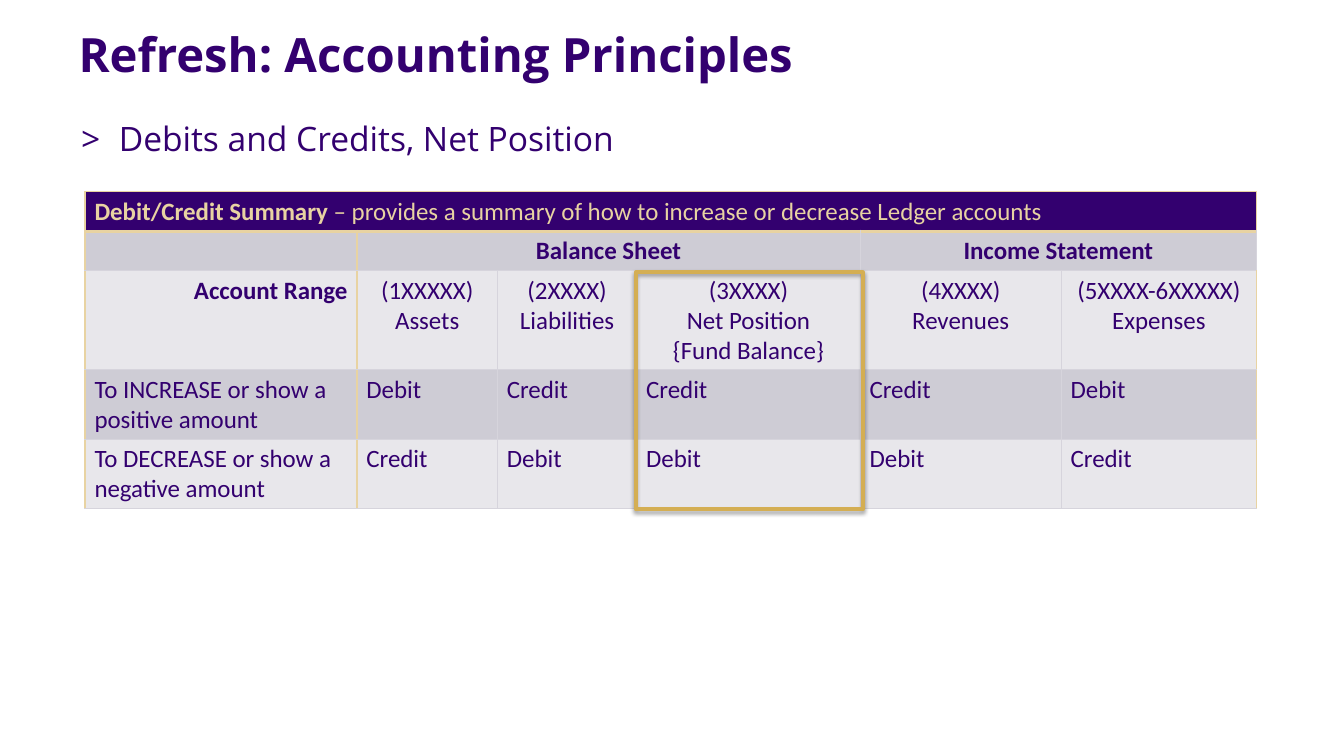
from dataclasses import dataclass

from lxml import etree
from pptx import Presentation
from pptx.dml.color import RGBColor
from pptx.enum.shapes import MSO_SHAPE
from pptx.enum.text import MSO_ANCHOR, MSO_AUTO_SIZE, PP_ALIGN
from pptx.oxml import parse_xml
from pptx.oxml.ns import nsdecls, qn
from pptx.util import Pt

LEFT, MID, RIGHT = PP_ALIGN.LEFT, PP_ALIGN.CENTER, PP_ALIGN.RIGHT
TOP = MSO_ANCHOR.TOP
NO_FIT = MSO_AUTO_SIZE.NONE
RECT = MSO_SHAPE.RECTANGLE

PURPLE = RGBColor(0x33, 0x00, 0x6F)
SAND = RGBColor(0xE8, 0xD3, 0xA2)
GOLD = RGBColor(0xD4, 0xAE, 0x53)
DARK = RGBColor(0xCE, 0xCC, 0xD5)
PALE = RGBColor(0xE8, 0xE7, 0xEB)
RULE = RGBColor(0xD6, 0xD4, 0xDC)

WIDTHS = (207.2, 107, 106.2, 170.2, 153.2, 148.8)
HEIGHTS = (28.8, 28.8, 72.8, 51, 51)
LAST = len(WIDTHS) - 1


@dataclass
class Cell:
    text: str = ""
    align: PP_ALIGN = LEFT
    bold: bool = False
    span: int = 1


@dataclass
class Row:
    fill: RGBColor
    cells: list[Cell]


ROWS = [
    Row(PURPLE, [Cell("Debit/Credit Summary ", bold=True, span=6)]),
    Row(DARK, [Cell(), Cell("Balance Sheet", MID, True, 3),
               Cell("Income Statement", MID, True, 2)]),
    Row(PALE, [Cell("Account Range", RIGHT, True)] + [
        Cell(text, MID) for text in (
            "(1XXXXX)\nAssets", "(2XXXX)\nLiabilities",
            "(3XXXX)\nNet Position\n{Fund Balance}",
            "(4XXXX)\nRevenues", "(5XXXX-6XXXXX)\nExpenses")]),
    Row(DARK, [Cell(text) for text in (
        "To INCREASE or show a positive amount",
        "Debit", "Credit", "Credit", "Credit", "Debit")]),
    Row(PALE, [Cell(text) for text in (
        "To DECREASE or show a negative amount",
        "Credit", "Debit", "Debit", "Debit", "Credit")]),
]


def write(para, text: str, *, size: float = 19, font: str = "Calibri",
          color: RGBColor = PURPLE, bold: bool = False,
          align: PP_ALIGN = LEFT) -> None:
    """Add one formatted run to a paragraph."""
    para.alignment = align
    run = para.add_run()
    run.text = text
    run.font.size = Pt(size)
    run.font.name = font
    run.font.bold = bold
    run.font.color.rgb = color


def place(shape, left: float, top: float, width: float, height: float) -> None:
    shape.left, shape.top = Pt(left), Pt(top)
    shape.width, shape.height = Pt(width), Pt(height)


def edge(cell, side: str, color: RGBColor, width: float) -> None:
    """Draw one border; sides must come in the order L, R, T, B."""
    props = cell._tc.get_or_add_tcPr()
    line = etree.SubElement(props, qn(f"a:ln{side}"), w=str(Pt(width)))
    fill = etree.SubElement(line, qn("a:solidFill"))
    etree.SubElement(fill, qn("a:srgbClr"), val=str(color))


def frame(cell, row: int, col: int) -> None:
    """Sand lines around the table, heading and first column."""
    edge(cell, "L", SAND if col < 2 else RULE, 1)
    edge(cell, "R", SAND if col in (0, LAST) else RULE, 1)
    edge(cell, "T", SAND if row < 2 else RULE, 3 if row == 1 else 1)
    edge(cell, "B", SAND if row == 0 else RULE, 3 if row == 0 else 1)


def fill_row(table, row: int, data: Row) -> None:
    for col in range(len(WIDTHS)):
        cell = table.cell(row, col)
        frame(cell, row, col)
        cell.fill.solid()
        cell.fill.fore_color.rgb = data.fill
    col = 0
    color = SAND if row == 0 else PURPLE
    for item in data.cells:
        cell = table.cell(row, col)
        if item.span > 1:
            cell.merge(table.cell(row, col + item.span - 1))
        if item.text:
            body = cell.text_frame
            for num, text in enumerate(item.text.split("\n")):
                para = body.add_paragraph() if num else body.paragraphs[0]
                write(para, text, color=color, bold=item.bold,
                      align=item.align)
        col += item.span


def main() -> None:
    deck = Presentation()
    deck.slide_width, deck.slide_height = Pt(1024), Pt(576)
    slide = deck.slides.add_slide(deck.slide_layouts[5])

    # Title
    title = slide.shapes.title
    place(title, 52.6, 20.9, 916.6, 37.4)
    body = title.text_frame
    body.auto_size, body.vertical_anchor = NO_FIT, TOP
    body.paragraphs[0].line_spacing = 0.9
    write(body.paragraphs[0], "Refresh: Accounting Principles",
          size=36, font="Open Sans", bold=True)

    # Topic with its bullet
    topic = slide.shapes.add_textbox(Pt(54.7), Pt(86.4), Pt(918), Pt(426.2))
    body = topic.text_frame
    body.word_wrap = True
    para = body.paragraphs[0]
    props = para._p.get_or_add_pPr()
    props.set("marL", str(Pt(28.8)))
    props.set("indent", str(Pt(-28.8)))
    etree.SubElement(props, qn("a:buFont"), typeface="Open Sans")
    etree.SubElement(props, qn("a:buChar"), char=">")
    write(para, "Debits and Credits, Net Position",
          size=25.6, font="Open Sans")

    # Summary table
    table = slide.shapes.add_table(
        len(HEIGHTS), len(WIDTHS), Pt(64.8), Pt(146.2),
        Pt(sum(WIDTHS)), Pt(sum(HEIGHTS))).table
    table.first_row = table.horz_banding = False
    for col, width in zip(table.columns, WIDTHS):
        col.width = Pt(width)
    for row, height in zip(table.rows, HEIGHTS):
        row.height = Pt(height)
    for num, data in enumerate(ROWS):
        fill_row(table, num, data)
    write(table.cell(0, 0).text_frame.paragraphs[0],
          "– provides a summary of how to increase or decrease "
          "Ledger accounts", color=SAND)

    # Box around the net position column
    box = slide.shapes.add_shape(RECT, Pt(484.6), Pt(207.4),
                                 Pt(172.8), Pt(180.7))
    box.fill.background()
    box.line.color.rgb = GOLD
    box.line.width = Pt(3)
    box._element.spPr.append(parse_xml(
        f'<a:effectLst {nsdecls("a")}><a:outerShdw blurRad="{Pt(3.1)}" '
        f'dist="{Pt(1.8)}" dir="5400000" rotWithShape="0">'
        '<a:srgbClr val="000000"><a:alpha val="35000"/></a:srgbClr>'
        '</a:outerShdw></a:effectLst>'))

    deck.save("out.pptx")


if __name__ == "__main__":
    main()
